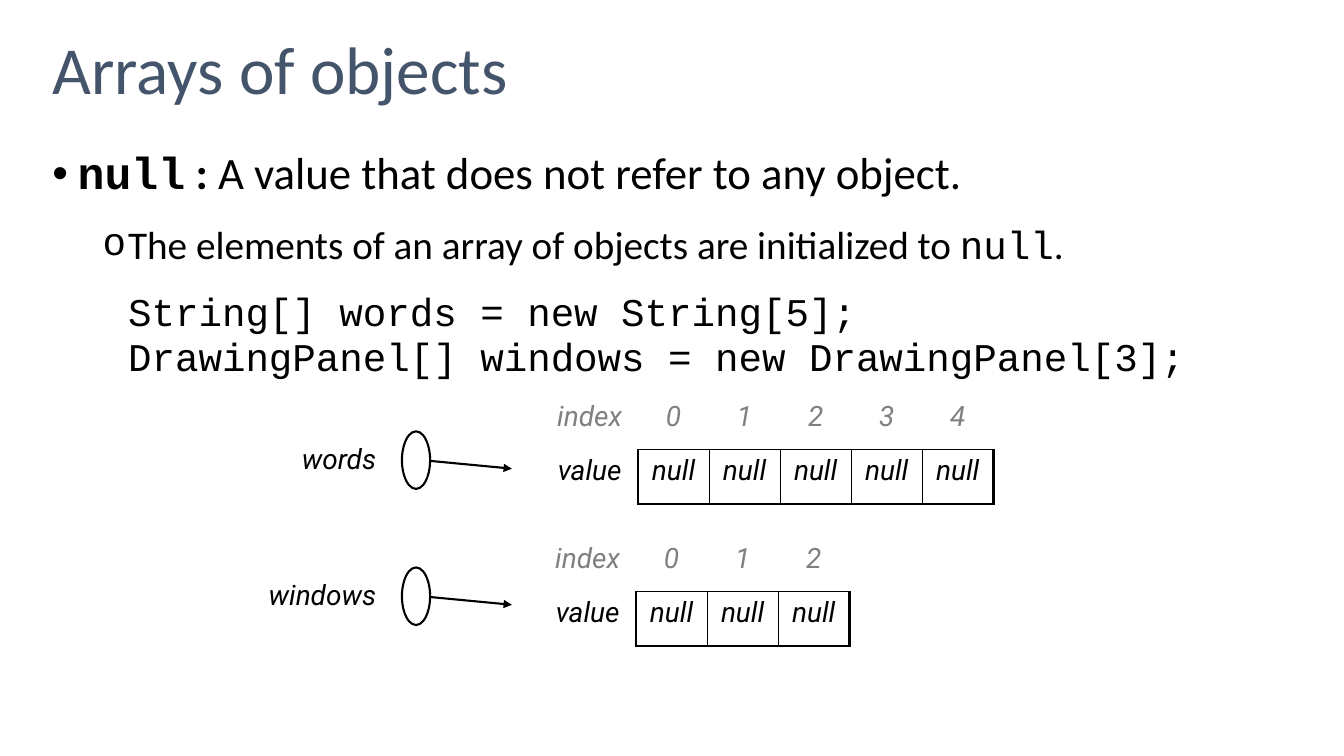
from lxml import etree
from pptx import Presentation
from pptx import util as u
from pptx.dml.color import RGBColor
from pptx.enum import shapes, text
from pptx.oxml import ns

BLACK, GREY, SLATE, WHITE = "000000", "808080", "44546A", "FFFFFF"
SANS, MONO, LABEL = "Calibri", "Courier New", "Roboto"
PLAIN = "{2D5ABB26-0587-4C30-8999-92F81FD0307C}"


def hue(code):
    """Turn a hex string into a colour."""
    return RGBColor.from_string(code)


def tag(parent, name, **attrs):
    """Append a drawing element to its parent."""
    return etree.SubElement(parent, ns.qn("a:" + name), attrs)


def write(para, words, color=BLACK, **form):
    """Add a formatted run to a paragraph."""
    run = para.add_run()
    run.text = words
    for key, val in form.items():
        setattr(run.font, key, val)
    run.font.color.rgb = hue(color)


def space(para, **form):
    """Set paragraph spacing and alignment."""
    for key, val in form.items():
        setattr(para, key, val)


def indent(para, left, mark=None, font="Arial"):
    """Indent a paragraph and give it a bullet if one is named."""
    props = para._p.get_or_add_pPr()
    props.set("marL", str(u.Cm(left)))
    props.set("indent", str(-u.Cm(0.64) if mark else 0))
    if mark:
        tag(props, "buFont", typeface=font)
        tag(props, "buChar", char=mark)
    else:
        tag(props, "buNone")


def head(slide, x, y, w, h):
    """Place the slide title."""
    title = slide.shapes.title
    title.left, title.top, title.width, title.height = map(u.Cm, (x, y, w, h))
    frame = title.text_frame
    frame.vertical_anchor = text.MSO_ANCHOR.MIDDLE
    para = frame.paragraphs[0]
    space(para, alignment=text.PP_ALIGN.LEFT, line_spacing=0.9)
    write(para, "Arrays of objects", SLATE, name=SANS, size=u.Pt(48))


def body(slide, x, y, w, h):
    """Place the definition and its code lines."""
    frame = slide.shapes.add_textbox(*map(u.Cm, (x, y, w, h))).text_frame
    frame.word_wrap = True
    rows = [
        (0.64, "•", "Arial", 0.9, 10, 32, [
            ("null", MONO, True), (" : ", SANS, True),
            ("A value that does not refer to any object.", SANS, False)]),
        (1.91, "o", MONO, 0.9, 19, 28, [
            ("The elements of an array of objects are initialized to ", SANS, False),
            ("null", MONO, False), (".", SANS, False)]),
        (1.91, None, None, 0.8, 20, 28, [
            ("String[] words = new String[5];", MONO, False)]),
        (1.91, None, None, 0.8, 5, 28, [
            ("DrawingPanel[] windows = new DrawingPanel[3];", MONO, False)]),
    ]
    for num, (left, mark, face, line, gap, size, runs) in enumerate(rows):
        para = frame.add_paragraph() if num else frame.paragraphs[0]
        space(para, line_spacing=line, space_before=u.Pt(gap))
        indent(para, left, mark, face)
        for words, font, bold in runs:
            write(para, words, name=font, size=u.Pt(size), bold=bold)


def edge(cell, **sides):
    """Draw cell borders of the given point widths."""
    props = cell._tc.get_or_add_tcPr()
    for side in "LRTB":
        if side in sides:
            line = tag(props, "ln" + side, w=str(u.Pt(sides[side])))
            tag(tag(line, "solidFill"), "srgbClr", val=BLACK)


def array(slide, x, y, count):
    """Draw an index row above a row of null values."""
    first, step, high = 2.44, 1.79, 1.37
    box = map(u.Cm, (x, y, first + step * count, high * 2))
    frame = slide.shapes.add_table(2, count + 1, *box)
    grid = frame.table
    grid.first_row = grid.horz_banding = False
    frame._element.find(".//" + ns.qn("a:tableStyleId")).text = PLAIN
    rows = [["index", *map(str, range(count))], ["value"] + ["null"] * count]
    for col, part in enumerate(grid.columns):
        part.width = u.Cm(step if col else first)
    for row, line in enumerate(rows):
        grid.rows[row].height = u.Cm(high)
        for col, words in enumerate(line):
            cell = grid.cell(row, col)
            para = cell.text_frame.paragraphs[0]
            space(para, alignment=text.PP_ALIGN.CENTER)
            write(para, words, BLACK if row else GREY,
                  name=LABEL, size=u.Pt(20), italic=True)
            if row and col:
                edge(cell, L=1, R=2.25 if col == count else 1, T=1, B=2.25)
            elif row:
                edge(cell, R=1)
            elif col:
                edge(cell, B=1)
            cell.fill.background()


def refer(slide, x, y, w, name):
    """Draw a named variable with an arrow to its array."""
    group = slide.shapes.add_group_shape().shapes
    frame = group.add_textbox(*map(u.Cm, (x, y, w, 1.24))).text_frame
    frame.word_wrap = True
    para = frame.paragraphs[0]
    space(para, alignment=text.PP_ALIGN.RIGHT)
    write(para, name, name=LABEL, size=u.Pt(20), italic=True)
    right = x + w
    ends = (right + 1.07, y + 0.61, right + 3.17, y + 0.81)
    arrow = group.add_connector(shapes.MSO_CONNECTOR.STRAIGHT, *map(u.Cm, ends))
    ring = group.add_shape(shapes.MSO_SHAPE.OVAL,
                           *map(u.Cm, (right + 0.4, y - 0.13, 0.71, 1.45)))
    ring.shadow.inherit = False
    ring.fill.solid()
    ring.fill.fore_color.rgb = hue(WHITE)
    for item in (arrow, ring):
        item.line.color.rgb = hue(BLACK)
        item.line.width = u.Pt(1.5)
    tag(arrow.line._get_or_add_ln(), "tailEnd", type="triangle")
    tag(arrow._element.spPr, "effectLst")


def main():
    """Build and save the slide."""
    deck = Presentation()
    deck.slide_width, deck.slide_height = u.Cm(33.87), u.Cm(19.05)
    slide = deck.slides.add_slide(deck.slide_layouts[5])
    head(slide, 1.07, 0, 31.75, 3.68)
    body(slide, 1.07, 3.68, 31.75, 14.38)
    array(slide, 13.64, 9.96, 5)
    array(slide, 13.59, 13.54, 3)
    refer(slide, 6.55, 11, 3.18, "words")
    refer(slide, 5.92, 14.43, 3.81, "windows")
    deck.save("out.pptx")


if __name__ == "__main__":
    main()
